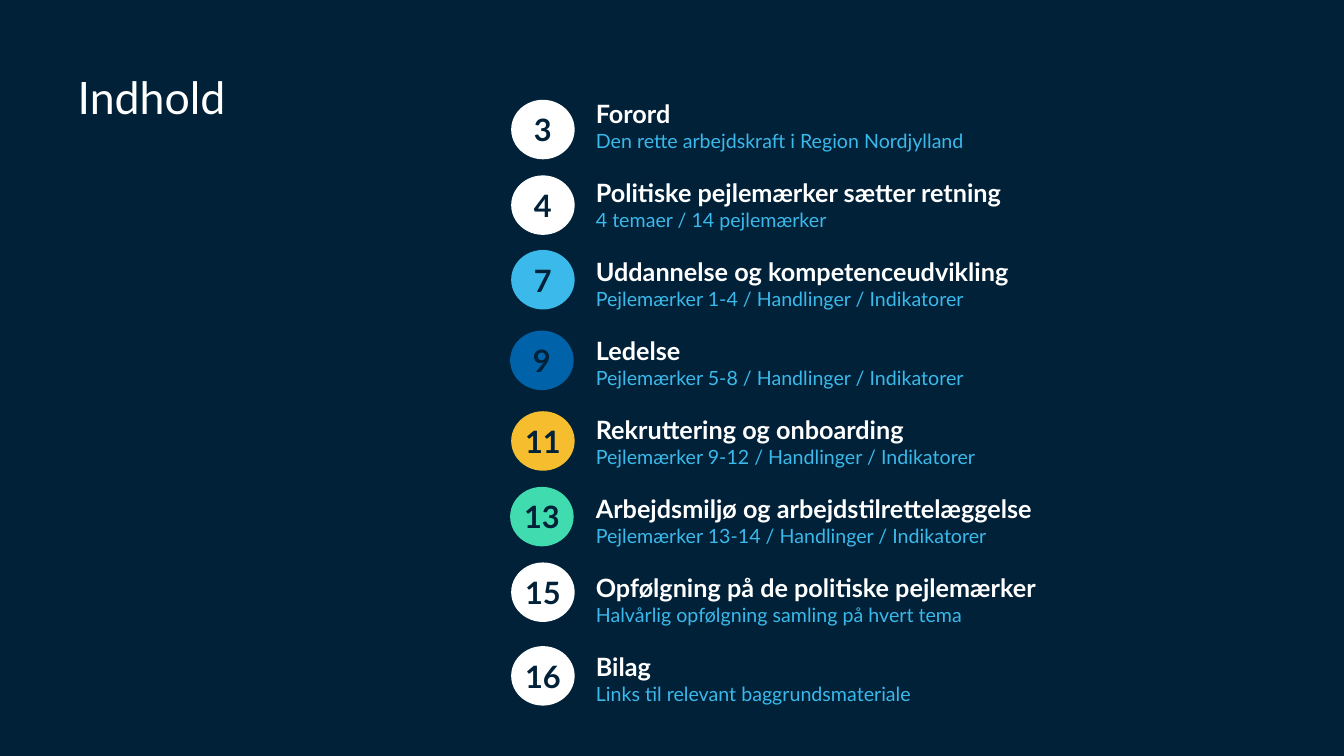
from lxml.etree import SubElement
from pptx import Presentation
from pptx.dml.color import RGBColor
from pptx.enum.shapes import MSO_SHAPE as Shape
from pptx.enum.text import MSO_ANCHOR as Anchor, MSO_AUTO_SIZE as AutoSize, PP_ALIGN as Align
from pptx.oxml.ns import qn
from pptx.util import Inches, Pt

NAVY = RGBColor(0x00, 0x21, 0x38)
WHITE = RGBColor(0xFF, 0xFF, 0xFF)
SKY = RGBColor(0x3B, 0xB9, 0xEB)
BLUE = RGBColor(0x00, 0x63, 0xA9)
YELLOW = RGBColor(0xF6, 0xBD, 0x2E)
GREEN = RGBColor(0x40, 0xDC, 0xAF)
FONT = "Lato"

CHAPTERS = [
    ("3", 5.07, 0.99, WHITE, "Forord", "Den rette arbejdskraft i Region Nordjylland"),
    ("4", 5.07, 1.74, WHITE, "Politiske pejlemærker sætter retning", "4 temaer / 14 pejlemærker"),
    ("7", 5.07, 2.48, SKY, "Uddannelse og kompetenceudvikling",
     "Pejlemærker 1-4 / Handlinger / Indikatorer"),
    ("9", 5.06, 3.28, BLUE, "Ledelse", "Pejlemærker 5-8 / Handlinger / Indikatorer"),
    ("11", 5.07, 4.08, YELLOW, "Rekruttering og onboarding",
     "Pejlemærker 9-12 / Handlinger / Indikatorer"),
    ("13", 5.06, 4.83, GREEN, "Arbejdsmiljø og arbejdstilrettelæggelse",
     "Pejlemærker 13-14 / Handlinger / Indikatorer"),
    ("15", 5.07, 5.58, WHITE, "Opfølgning på de politiske pejlemærker",
     "Halvårlig opfølgning samling på hvert tema"),
    ("16", 5.07, 6.41, WHITE, "Bilag", "Links til relevant baggrundsmateriale"),
]


def place(shape, left, top, width, height):
    shape.left, shape.top = Inches(left), Inches(top)
    shape.width, shape.height = Inches(width), Inches(height)


def set_frame(frame, anchor, inset=None):
    frame.word_wrap = True
    frame.auto_size = AutoSize.NONE
    frame.vertical_anchor = anchor
    if inset is not None:
        frame.margin_left = frame.margin_right = Inches(inset)
        frame.margin_top = frame.margin_bottom = Inches(inset)


deck = Presentation()
deck.slide_width, deck.slide_height = Inches(13.33), Inches(7.5)
page = deck.slides.add_slide(deck.slide_layouts[1])
page.background.fill.solid()
page.background.fill.fore_color.rgb = NAVY

title = page.shapes.title
place(title, 0.77, 0.8, 11.15, 0.39)
set_frame(title.text_frame, Anchor.TOP, 0)
title.text_frame.text = "Indhold"
para = title.text_frame.paragraphs[0]
para.alignment = Align.LEFT
para.line_spacing = 0.8
para.font.name, para.font.size = FONT, Pt(31.9)
para.font.color.rgb = WHITE

contents = page.placeholders[1]
place(contents, 5.81, 0.93, 7.4, 6.2)
set_frame(contents.text_frame, Anchor.TOP)

for index, (number, left, top, color, heading, detail) in enumerate(CHAPTERS):
    frame = contents.text_frame
    para = frame.add_paragraph() if index else frame.paragraphs[0]
    para.space_before = Pt(18 if index else 0)
    properties = para._p.get_or_add_pPr()
    properties.set("marL", "0")
    properties.set("indent", "0")
    SubElement(properties, qn("a:buNone"))
    para.font.name = FONT
    for text, size, ink, bold in ((heading, 18, WHITE, True), (detail, 14, SKY, False)):
        if not bold:
            para.add_line_break()
        span = para.add_run()
        span.text = text
        span.font.size, span.font.bold = Pt(size), bold
        span.font.color.rgb = ink

    circle = page.shapes.add_shape(
        Shape.OVAL, Inches(left), Inches(top), Inches(0.63), Inches(0.59))
    circle.shadow.inherit = False
    circle.fill.solid()
    circle.fill.fore_color.rgb = color
    circle.line.fill.background()
    set_frame(circle.text_frame, Anchor.MIDDLE, 0)
    circle.text_frame.text = number
    para = circle.text_frame.paragraphs[0]
    para.alignment = Align.CENTER
    para.font.name, para.font.size, para.font.bold = FONT, Pt(22), True
    para.font.color.rgb = NAVY

deck.save("out.pptx")
